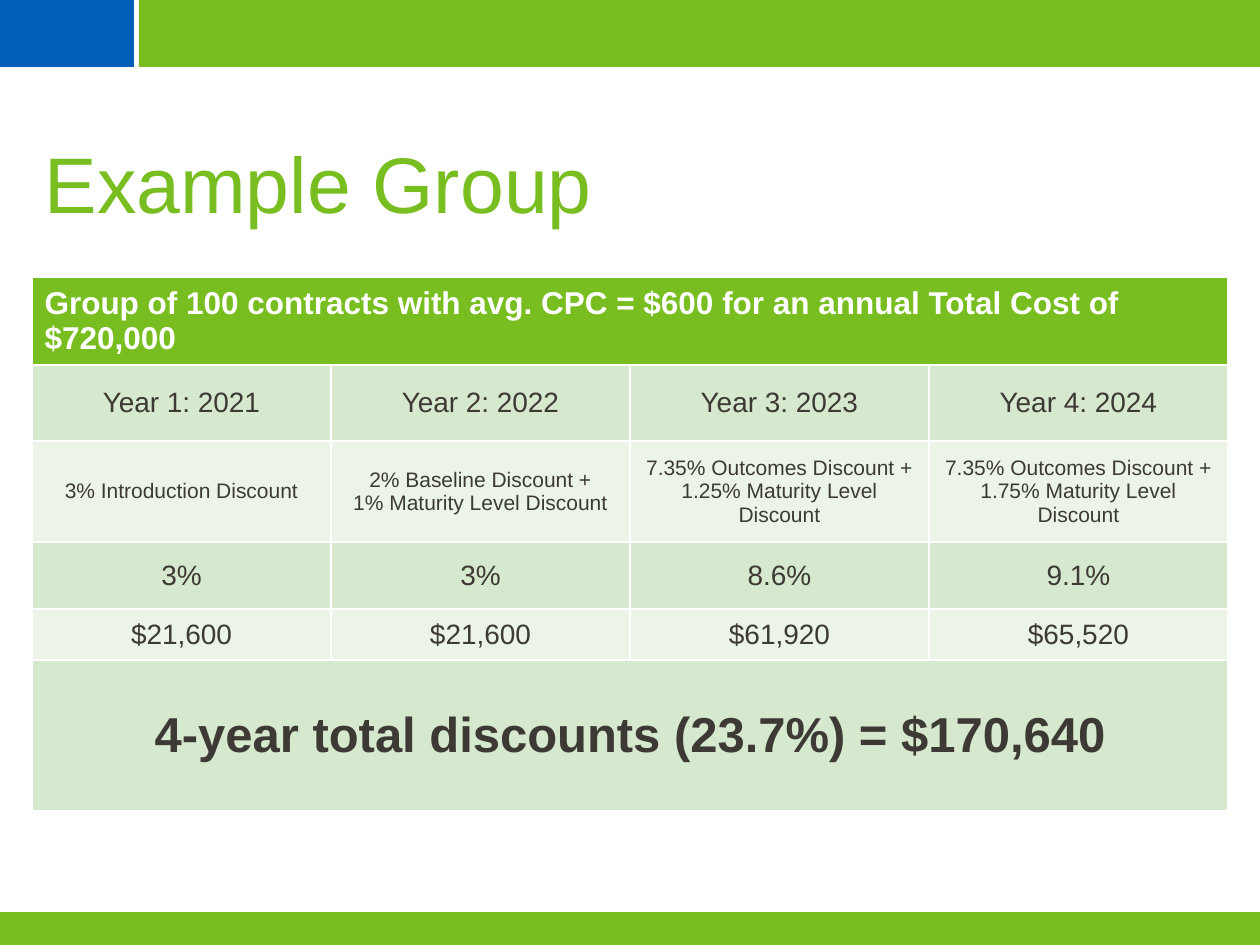
from pptx import Presentation
from pptx.dml.color import RGBColor
from pptx.enum.shapes import MSO_SHAPE
from pptx.enum.text import MSO_ANCHOR, PP_ALIGN
from pptx.util import Emu, Pt

GREEN = RGBColor(0x78, 0xBE, 0x20)
BLUE = RGBColor(0x00, 0x5E, 0xB8)
WHITE = RGBColor(0xFF, 0xFF, 0xFF)
DARK = RGBColor(0x3D, 0x39, 0x35)
BAND_DEEP = RGBColor(0xD6, 0xE8, 0xCD)
BAND_PALE = RGBColor(0xEC, 0xF4, 0xE8)

EMU_PER_INCH = 914400
PX_PER_INCH = 126


def px(length):
    return Emu(round(length * EMU_PER_INCH / PX_PER_INCH))


def style_text(frame, size, color, bold, align):
    for para in frame.paragraphs:
        para.alignment = align
        for span in para.runs:
            span.font.name = "Arial"
            span.font.size = Pt(size)
            span.font.bold = bold
            span.font.color.rgb = color


deck = Presentation()
deck.slide_width, deck.slide_height = px(1260), px(945)
page = deck.slides.add_slide(deck.slide_layouts[5])

# Header and footer bars
bars = [
    (139, 0, 1121, 67, GREEN),
    (0, 0, 134, 67, BLUE),
    (0, 912, 1260, 33, GREEN),
]
for left, top, width, height, color in bars:
    bar = page.shapes.add_shape(
        MSO_SHAPE.RECTANGLE, px(left), px(top), px(width), px(height))
    bar.shadow.inherit = False
    bar.fill.solid()
    bar.fill.fore_color.rgb = color
    bar.line.fill.background()

# Title
title = page.shapes.title
title.left, title.top, title.width, title.height = px(32), px(117), px(1134), px(129)
title.text_frame.text = "Example Group"
title.text_frame.vertical_anchor = MSO_ANCHOR.MIDDLE
style_text(title.text_frame, 45, GREEN, False, PP_ALIGN.LEFT)

# Discount table: height, size, bold, fill, texts; a single text spans the row
COLUMNS = 4
COLUMN_WIDTH = 299
rows = [
    (88, 18, True, GREEN,
     ["Group of 100 contracts with avg. CPC = $600 for an annual Total Cost of $720,000"]),
    (76, 16, False, BAND_DEEP,
     ["Year 1: 2021", "Year 2: 2022", "Year 3: 2023", "Year 4: 2024"]),
    (101, 12, False, BAND_PALE,
     ["3% Introduction Discount",
      "2% Baseline Discount +\n1% Maturity Level Discount",
      "7.35% Outcomes Discount + 1.25% Maturity Level Discount",
      "7.35% Outcomes Discount + 1.75% Maturity Level Discount"]),
    (67, 16, False, BAND_DEEP, ["3%", "3%", "8.6%", "9.1%"]),
    (51, 16, False, BAND_PALE, ["$21,600", "$21,600", "$61,920", "$65,520"]),
    (151, 28, True, BAND_DEEP, ["4-year total discounts (23.7%) = $170,640"]),
]
table = page.shapes.add_table(
    len(rows), COLUMNS, px(32), px(277),
    px(COLUMNS * COLUMN_WIDTH), px(sum(row[0] for row in rows))).table
for column in table.columns:
    column.width = px(COLUMN_WIDTH)

for row_index, (height, size, bold, fill, texts) in enumerate(rows):
    table.rows[row_index].height = px(height)
    is_header = row_index == 0
    if len(texts) == 1:
        table.cell(row_index, 0).merge(table.cell(row_index, COLUMNS - 1))
    for column_index, text in enumerate(texts):
        cell = table.cell(row_index, column_index)
        cell.fill.solid()
        cell.fill.fore_color.rgb = fill
        cell.vertical_anchor = MSO_ANCHOR.MIDDLE
        cell.text_frame.text = text
        style_text(cell.text_frame, size, WHITE if is_header else DARK, bold,
                   PP_ALIGN.LEFT if is_header else PP_ALIGN.CENTER)

deck.save("out.pptx")
